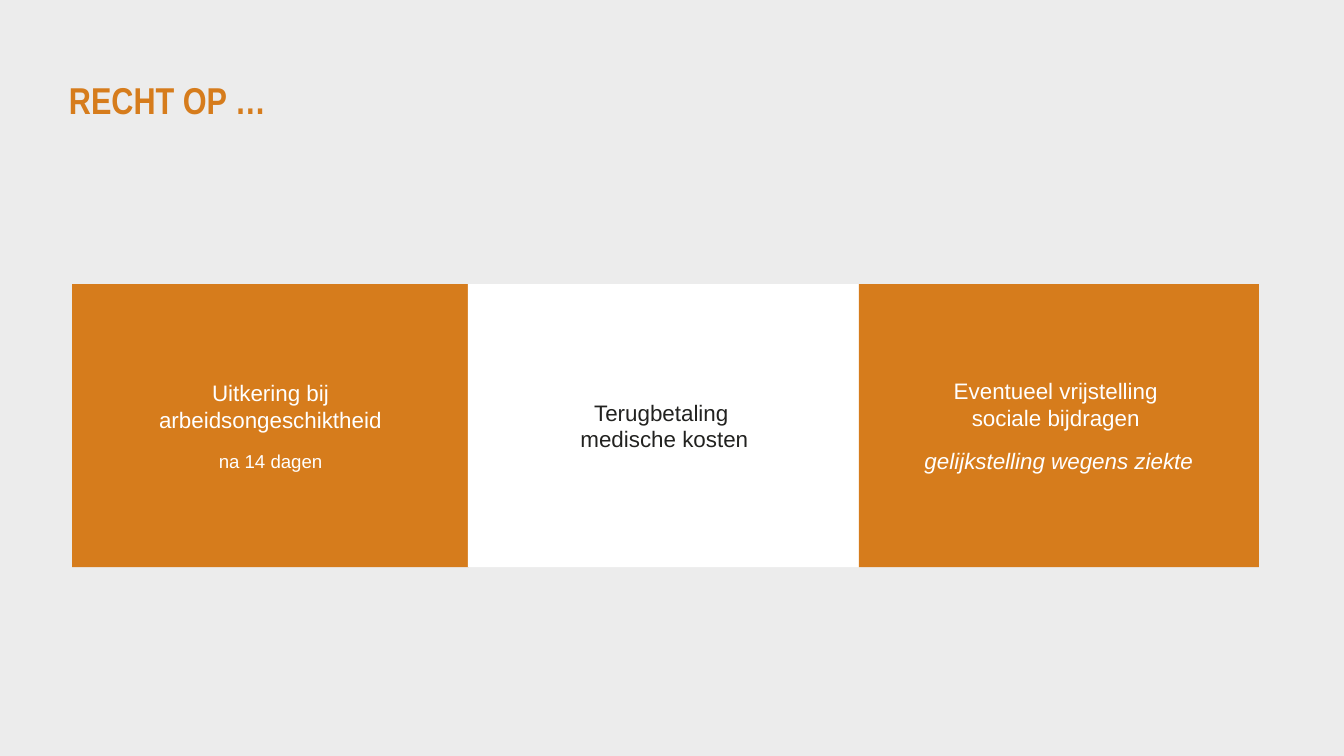
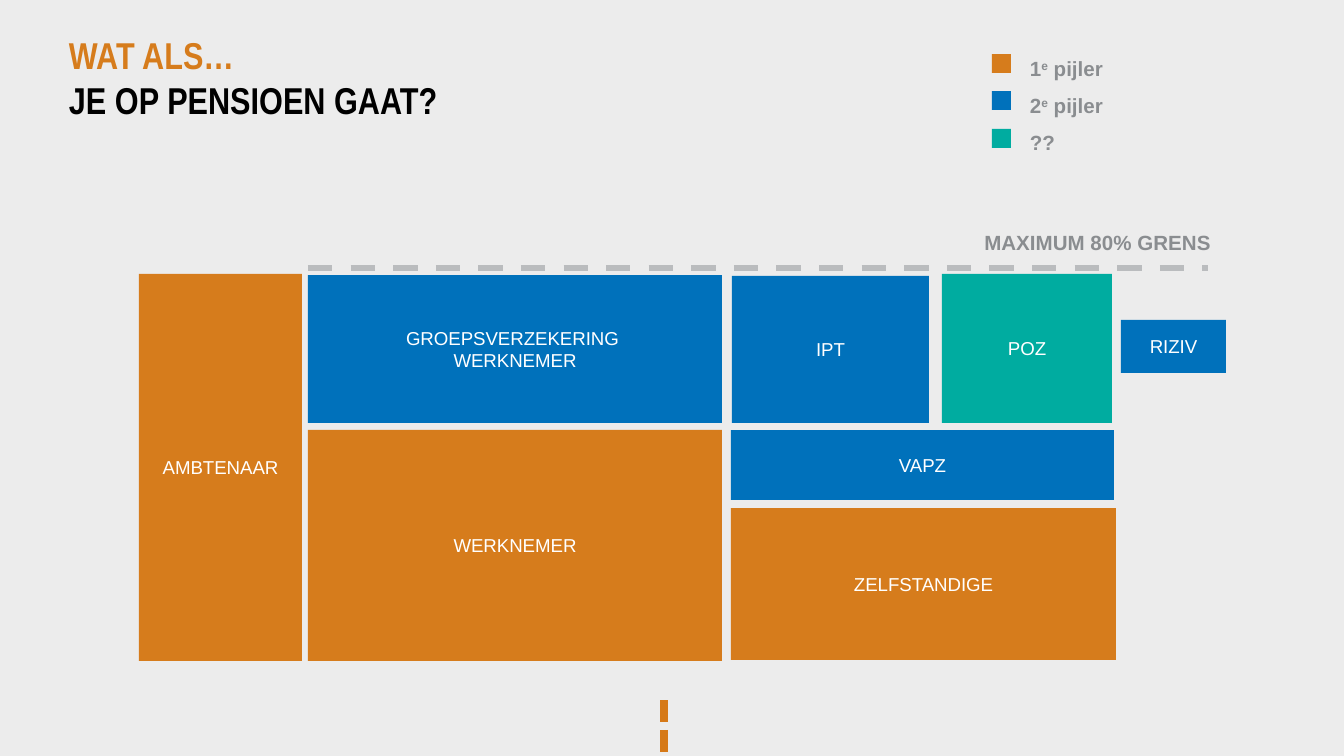
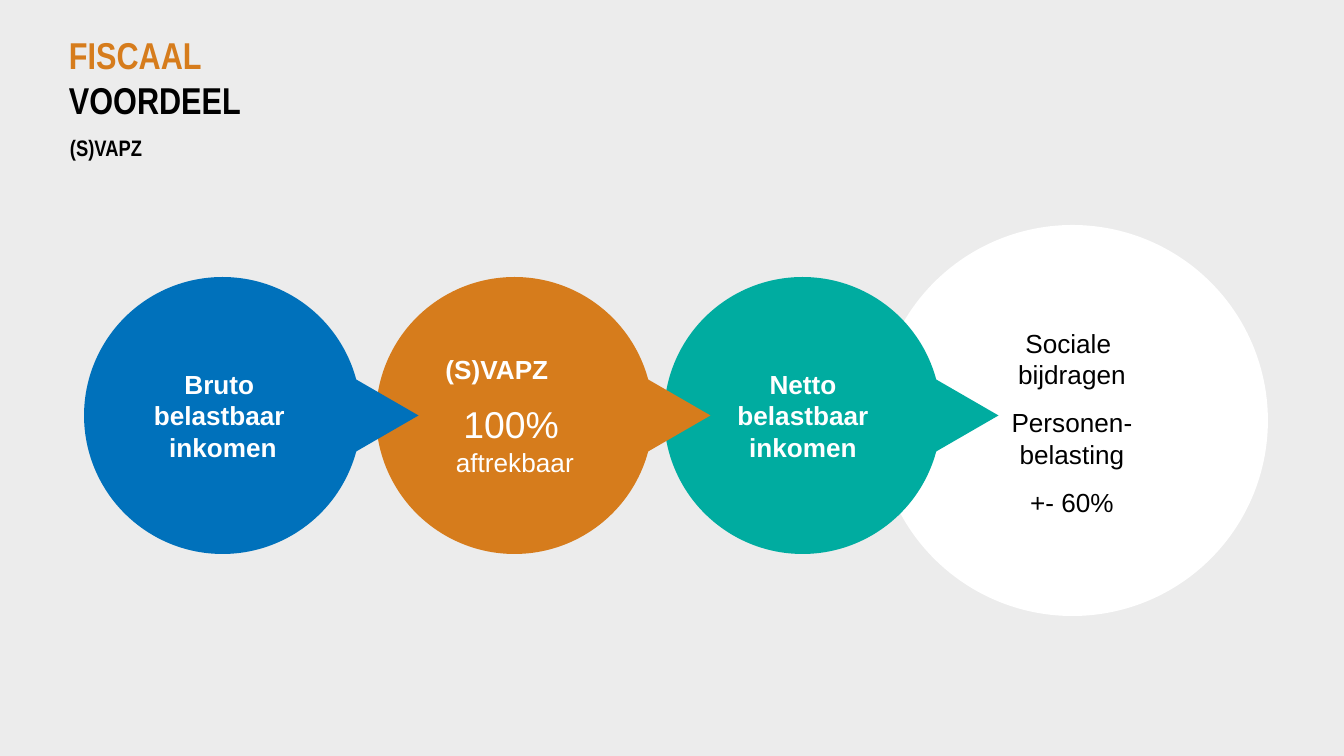
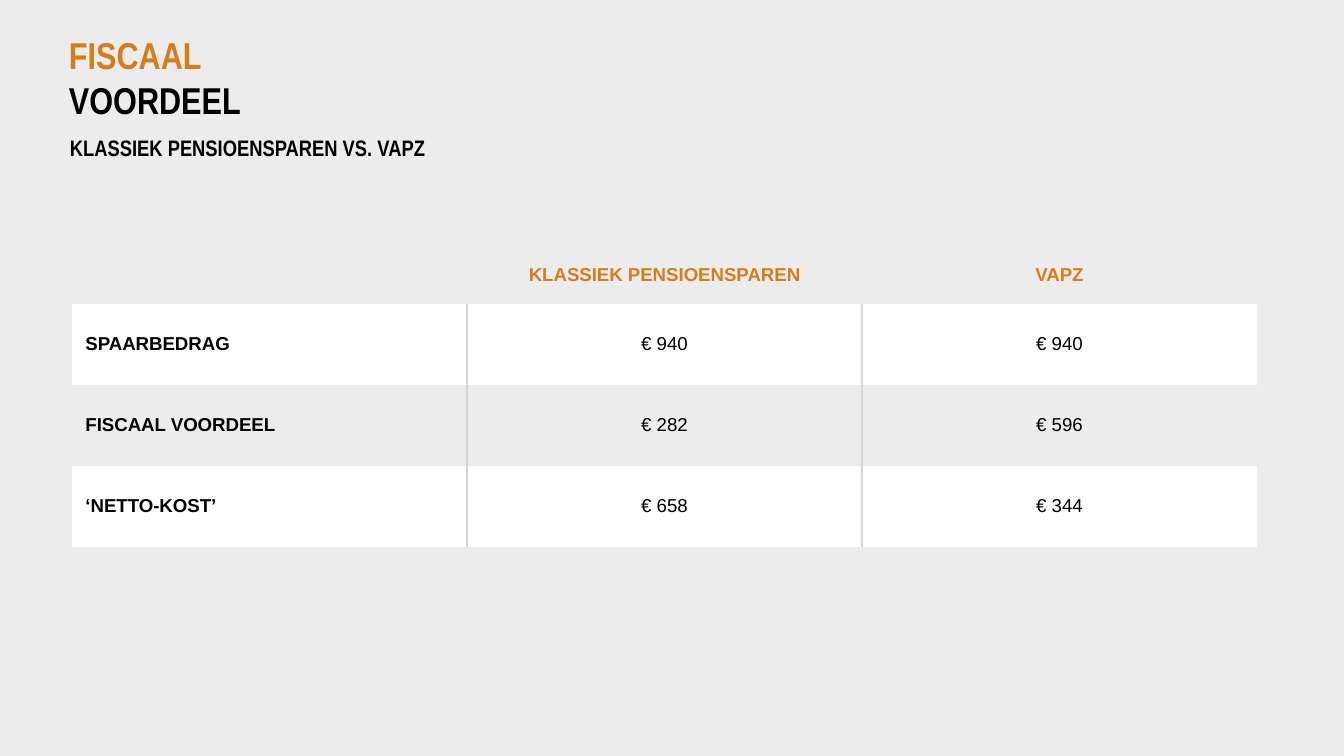
import copy
import pptx
import pptx.util
import pptx.dml.color
import pptx.enum.dml
import pptx.enum.shapes
import pptx.enum.text
import pptx.oxml
from lxml import etree

PX = 6804  # EMU in one px, 1344 px across the slide
COLORS = {
    "orange": "D67C1C", "blue": "0071BB", "teal": "00ACA0", "white": "FFFFFF",
    "black": "000000", "ink": "222220", "grey": "8A8D90", "dash": "BABCBE",
    "tick": "D67917", "border": "D4D4D4", "back": "ECECEC",
}
RGB = {name: pptx.dml.color.RGBColor.from_string(c) for name, c in COLORS.items()}
A = "http://schemas.openxmlformats.org/drawingml/2006/main"
SHAPE = pptx.enum.shapes.MSO_SHAPE
ALIGN = pptx.enum.text.PP_ALIGN
ANCHOR = pptx.enum.text.MSO_ANCHOR
DASH = pptx.enum.dml.MSO_LINE


def add_item(slide, kind, x, y, w, h, fill=None, inset=0, anchor=ANCHOR.MIDDLE):
    """Add a filled shape, or a text box when kind is None."""
    box = [v * PX for v in (x, y, w, h)]
    if kind is None:
        sp = slide.shapes.add_textbox(*box)
    else:
        sp = slide.shapes.add_shape(kind, *box)
        sp.shadow.inherit = False
        sp.fill.solid()
        sp.fill.fore_color.rgb = RGB[fill]
        sp.line.fill.background()
    tf = sp.text_frame
    tf.word_wrap = True
    tf.vertical_anchor = anchor
    tf.margin_left = tf.margin_right = tf.margin_top = tf.margin_bottom = inset * PX
    return sp


def write(tf, paras, align=ALIGN.CENTER, font="Arial", gap=0, spacing=None):
    """Each paragraph lists runs (text, size, colour, style): b bold, i italic, ^ raised."""
    for i, runs in enumerate(paras):
        p = tf.paragraphs[0] if i == 0 else tf.add_paragraph()
        p.alignment = align
        if spacing:
            p.line_spacing = spacing
        if gap:
            p.space_after = pptx.util.Pt(gap)
            if i:
                p.space_before = pptx.util.Pt(gap / 2)
        for text, size, color, style in runs:
            for j, part in enumerate(text.split("\n")):
                if j:
                    p.add_line_break()
                    p._p[-1].append(copy.deepcopy(r._r.rPr))
                if not part:
                    continue
                r = p.add_run()
                r.text = part
                r.font.name = font
                r.font.size = pptx.util.Pt(size)
                r.font.color.rgb = RGB[color]
                r.font.bold = "b" in style
                r.font.italic = "i" in style
                if "^" in style:
                    r.font._element.set("baseline", "30000")


prs = pptx.Presentation()
prs.slide_width = 1344 * PX
prs.slide_height = 756 * PX

# Shared background, title and subtitle
slides = []
for lead, rest, subtitle in [
    ("RECHT OP …", "", ""),
    ("WAT ALS…\n", "JE OP PENSIOEN GAAT?", ""),
    ("FISCAAL \n", "VOORDEEL", "(S)VAPZ"),
    ("FISCAAL \n", "VOORDEEL", "KLASSIEK PENSIOENSPAREN VS. VAPZ"),
]:
    slide = prs.slides.add_slide(prs.slide_layouts[6])
    slide.background.fill.solid()
    slide.background.fill.fore_color.rgb = RGB["back"]
    sp = add_item(slide, None, 69, 40, 595, 82, anchor=ANCHOR.BOTTOM)
    write(sp.text_frame, [[(lead, 20, "orange", "b"), (rest, 20, "black", "b")]],
          ALIGN.LEFT, "Arial Narrow")
    if subtitle:
        sp = add_item(slide, None, 70, 134, 594, 71, anchor=ANCHOR.TOP)
        write(sp.text_frame, [[(subtitle, 12, "black", "b")]], ALIGN.LEFT, "Arial Narrow", gap=6)
    slides.append(slide)
rights, pension, benefit, comparison = slides

# Slide 1: three panels
for x, w, fill, paras in [
    (72, 397, "orange", [[("Uitkering bij arbeidsongeschiktheid", 12, "white", "")],
                         [("na 14 dagen", 10, "white", "")]]),
    (468, 393, "white", [[("Terugbetaling \nmedische kosten", 12, "ink", "")]]),
    (859, 400, "orange", [[("Eventueel vrijstelling \nsociale bijdragen ", 12, "white", "")],
                          [("gelijkstelling wegens ziekte", 12, "white", "i")]]),
]:
    sp = add_item(rights, SHAPE.RECTANGLE, x, 284, w, 283, fill, inset=52)
    write(sp.text_frame, paras, gap=6)

# Slide 2: pension blocks
for text, x, y, w, h, fill in [
    ("AMBTENAAR", 139, 274, 163, 387, "orange"),
    ("WERKNEMER", 308, 430, 414, 231, "orange"),
    ("ZELFSTANDIGE", 731, 508, 385, 152, "orange"),
    ("VAPZ", 731, 430, 383, 70, "blue"),
    ("GROEPSVERZEKERING \nWERKNEMER", 308, 275, 414, 148, "blue"),
    ("IPT", 732, 276, 197, 147, "blue"),
    ("POZ", 942, 274, 170, 149, "teal"),
    ("RIZIV", 1121, 320, 105, 53, "blue"),
]:
    sp = add_item(pension, SHAPE.RECTANGLE, x, y, w, h, fill, inset=7)
    write(sp.text_frame, [[(text, 10, "white", "")]])

# Slide 2: dashed limit and bottom tick
for x1, y1, x2, y2, color, width, dash in [
    (308, 268, 1208, 268, "dash", 3.25, DASH.DASH),
    (664, 700, 664, 756, "tick", 4, DASH.SQUARE_DOT),
]:
    line = pension.shapes.add_connector(pptx.enum.shapes.MSO_CONNECTOR.STRAIGHT,
                                        x1 * PX, y1 * PX, x2 * PX, y2 * PX)
    line.line.color.rgb = RGB[color]
    line.line.width = pptx.util.Pt(width)
    line.line.dash_style = dash
    etree.SubElement(line._element.spPr, f"{{{A}}}effectLst")
sp = add_item(pension, None, 958, 230, 253, 26, anchor=ANCHOR.TOP)
write(sp.text_frame, [[("MAXIMUM 80% GRENS", 11, "grey", "b")]], ALIGN.RIGHT)

# Slide 2: legend
for i, fill in enumerate(["orange", "blue", "teal"]):
    add_item(pension, SHAPE.RECTANGLE, 992, 54 + 75 * i // 2, 19, 19, fill)
sp = add_item(pension, None, 1030, 44, 236, 112, anchor=ANCHOR.TOP)
pillars = [[(n, 11, "grey", "b"), ("e", 11, "grey", "b^"), (" pijler", 11, "grey", "b")]
           for n in "12"]
write(sp.text_frame, pillars + [[("??", 11, "grey", "b")]], ALIGN.LEFT, spacing=1.5)

# Slide 3: chain of circles with pointers
add_item(benefit, SHAPE.OVAL, 877, 225, 391, 391, "white")
for x, fill, text_x, text_w, paras in [
    (664, "teal", 704, 198, [[("Netto belastbaar inkomen", 14, "white", "b")]]),
    (376, "orange", 378, 238, [[("(S)VAPZ", 14, "white", "b")],
                               [("100%", 20, "white", ""), (" \naftrekbaar", 14, "white", "")]]),
    (84, "blue", 125, 196, [[("Bruto \nbelastbaar \ninkomen", 14, "white", "b")]]),
]:
    add_item(benefit, SHAPE.OVAL, x, 277, 277, 277, fill)
    pointer = add_item(benefit, SHAPE.ISOSCELES_TRIANGLE, x + 258, 380, 82, 71, fill)
    pointer.rotation = 90
    sp = add_item(benefit, None, text_x, 312, text_w, 207)
    write(sp.text_frame, paras, gap=6)
    for p in sp.text_frame.paragraphs[1:]:
        p._p.get_or_add_pPr().set("marL", str(36 * PX))
sp = add_item(benefit, None, 920, 319, 304, 207)
write(sp.text_frame, [[(text, 14, "black", "")] for text in
                      ("Sociale \nbijdragen", "Personen-\nbelasting", "+- 60%")], gap=6)

# Slide 4: comparison table
rows = [
    ("", "KLASSIEK PENSIOENSPAREN", "VAPZ"),
    ("SPAARBEDRAG", "€ 940", "€ 940"),
    ("FISCAAL VOORDEEL", "€ 282", "€ 596"),
    ("‘NETTO-KOST’", "€ 658", "€ 344"),
]
frame = comparison.shapes.add_table(4, 3, 72 * PX, 246 * PX, 1185 * PX, 301 * PX)
table = frame.table
table.first_row = table.horz_banding = False
table._tbl.tblPr.find(f"{{{A}}}tableStyleId").text = "{2D5ABB26-0587-4C30-8999-92F81FD0307C}"
for col in table.columns:
    col.width = 395 * PX
for i, row in enumerate(rows):
    table.rows[i].height = (81 if i else 58) * PX
    for j, text in enumerate(row):
        cell = table.cell(i, j)
        cell.vertical_anchor = ANCHOR.MIDDLE
        if i % 2:
            cell.fill.solid()
            cell.fill.fore_color.rgb = RGB["white"]
        else:
            cell.fill.background()
        if text:
            style = "b" if i == 0 or j == 0 else ""
            write(cell.text_frame, [[(text, 10, "black" if i else "orange", style)]],
                  ALIGN.CENTER if j else ALIGN.LEFT)
        # Vertical rules between the columns, below the header
        for tag, shown in (("lnR", i and j < 2), ("lnL", i and j)):
            if shown:
                cell._tc.get_or_add_tcPr().insert(0, pptx.oxml.parse_xml(
                    f'<a:{tag} xmlns:a="{A}" w="12700"><a:solidFill>'
                    f'<a:srgbClr val="{COLORS["border"]}"/></a:solidFill></a:{tag}>'))

prs.save("out.pptx")
